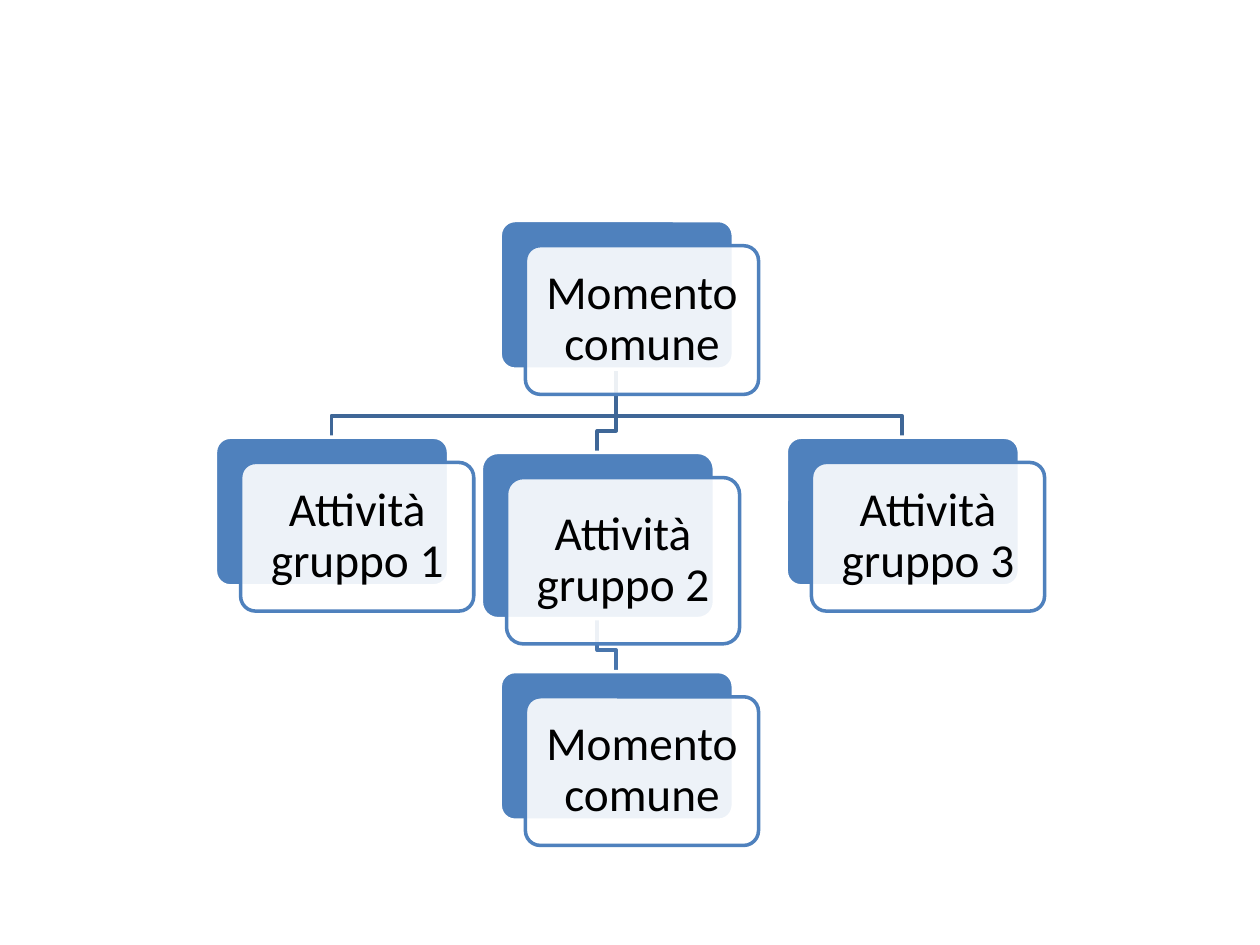
from dataclasses import dataclass

from lxml import etree
from pptx import Presentation
from pptx import util as u
from pptx.dml.color import RGBColor
from pptx.enum import shapes, text
from pptx.oxml.ns import qn

PX = 9144  # EMU per px, 100 px to the inch
BLUE = RGBColor(0x4F, 0x81, 0xBD)
TRUNK_BLUE = RGBColor(0x3F, 0x67, 0x97)
BRANCH_BLUE = RGBColor(0x48, 0x75, 0xAC)
WHITE = RGBColor(0xFF, 0xFF, 0xFF)
BLACK = RGBColor(0, 0, 0)

CARD_WIDTH = 185
CARD_OFFSET = 20  # front card, right of and below the back card
BEND_GAP = 17     # from a link's bend to the box below
LINE_WIDTH = u.Pt(2)
FRAME_FORMAT = {
    "word_wrap": True,
    "vertical_anchor": text.MSO_ANCHOR.MIDDLE,
    **{f"margin_{side}": 11 * PX for side in ("left", "top", "right", "bottom")},
}
PARAGRAPH_FORMAT = {"alignment": text.PP_ALIGN.CENTER, "line_spacing": 0.9}
FONT_FORMAT = {"name": "Calibri", "size": u.Pt(27)}


@dataclass(frozen=True)
class Box:
    label: str
    left: int
    top: int
    height: int = 118

    @property
    def middle(self) -> int:
        return self.left + CARD_WIDTH // 2

    @property
    def bottom(self) -> int:
        return self.top + self.height


@dataclass(frozen=True)
class Link:
    parent: Box
    child: Box
    color: RGBColor = TRUNK_BLUE


start = Box("Momento comune", 397, 175)
group_1 = Box("Attività gruppo 1", 171, 347)
group_2 = Box("Attività gruppo 2", 382, 359, 132)
end = Box("Momento comune", 397, 533)
group_3 = Box("Attività gruppo 3", 624, 347)
BOXES = [start, group_1, group_2, end, group_3]
LINKS = [
    Link(start, group_3),
    Link(group_2, end, BRANCH_BLUE),
    Link(start, group_2),
    Link(start, group_1),
]


def set_values(target, values: dict) -> None:
    for name, value in values.items():
        setattr(target, name, value)


def draw_link(slide, link: Link) -> None:
    parent, child = link.parent, link.child
    bend = child.top - BEND_GAP
    builder = slide.shapes.build_freeform(parent.middle, parent.bottom, scale=PX)
    builder.add_line_segments(
        [(parent.middle, bend), (child.middle, bend), (child.middle, child.top)],
        close=False,
    )
    shape = builder.convert_to_shape()
    shape.shadow.inherit = False
    shape.fill.background()
    shape.line.color.rgb = link.color
    shape.line.width = LINE_WIDTH


def draw_card(slide, box: Box, offset: int, fill: RGBColor, line: RGBColor):
    shape = slide.shapes.add_shape(
        shapes.MSO_SHAPE.ROUNDED_RECTANGLE,
        (box.left + offset) * PX, (box.top + offset) * PX,
        CARD_WIDTH * PX, box.height * PX,
    )
    shape.adjustments[0] = 0.1
    shape.shadow.inherit = False
    shape.fill.solid()
    shape.fill.fore_color.rgb = fill
    shape.line.color.rgb = line
    shape.line.width = LINE_WIDTH
    return shape


def draw_box(slide, box: Box) -> None:
    """Draw a blue card with a translucent, labelled card over it."""
    draw_card(slide, box, 0, BLUE, WHITE)
    front = draw_card(slide, box, CARD_OFFSET, WHITE, BLUE)
    color = front.fill._xPr.find(qn("a:solidFill"))[0]
    etree.SubElement(color, qn("a:alpha"), val="90000")

    frame = front.text_frame
    set_values(frame, FRAME_FORMAT)
    paragraph = frame.paragraphs[0]
    set_values(paragraph, PARAGRAPH_FORMAT)
    run = paragraph.add_run()
    run.text = box.label
    set_values(run.font, FONT_FORMAT)
    run.font.color.rgb = BLACK


def main() -> None:
    presentation = Presentation()
    presentation.slide_width = 1000 * PX
    presentation.slide_height = 750 * PX
    slide = presentation.slides.add_slide(presentation.slide_layouts[6])
    for link in LINKS:
        draw_link(slide, link)
    for box in BOXES:
        draw_box(slide, box)
    presentation.save("out.pptx")


if __name__ == "__main__":
    main()
